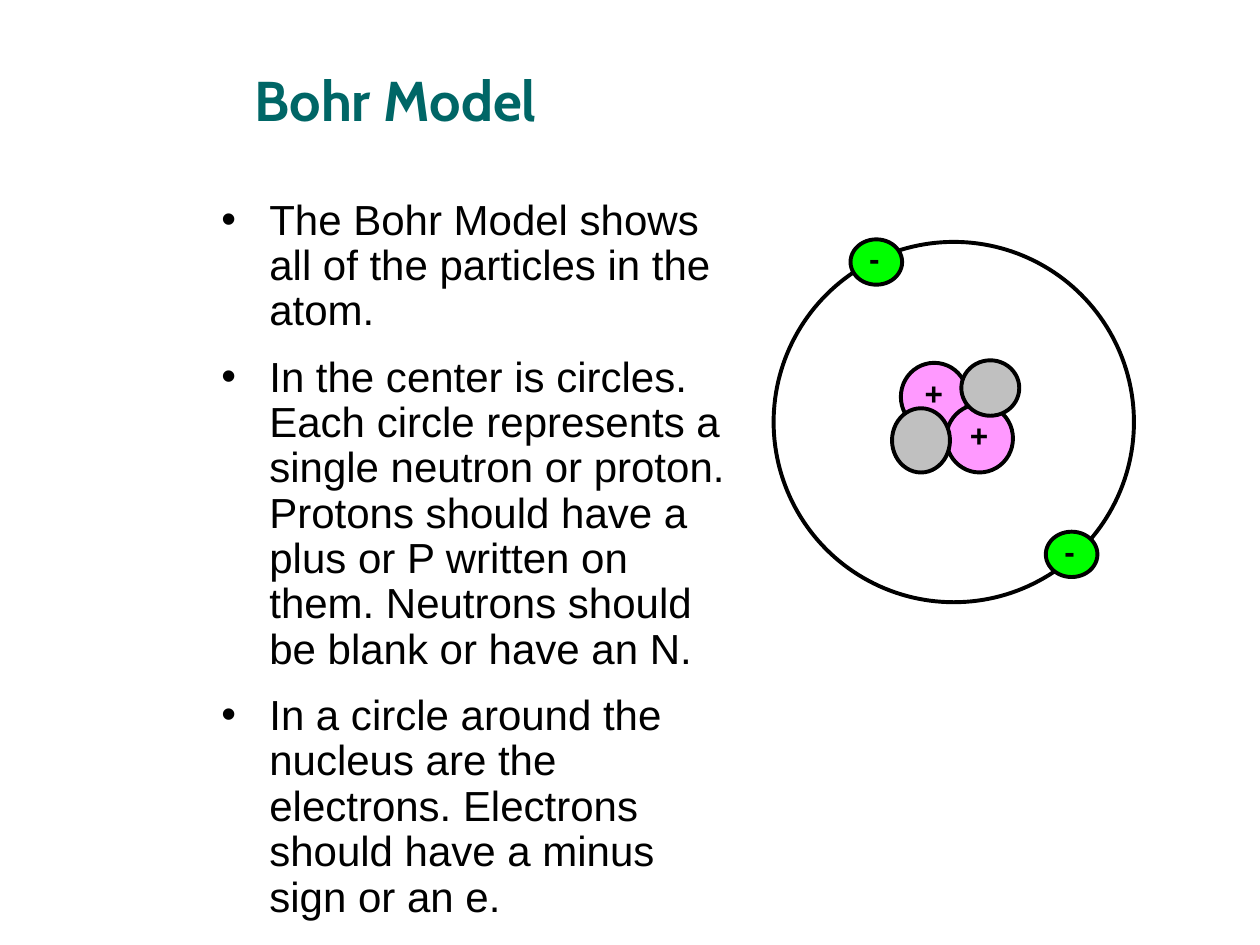
import pptx
import pptx.dml.color
import pptx.enum.shapes
import pptx.enum.text
import pptx.util
from lxml import etree

Inches = pptx.util.Inches
Pt = pptx.util.Pt
RGBColor = pptx.dml.color.RGBColor
Anchor = pptx.enum.text.MSO_ANCHOR
Align = pptx.enum.text.PP_ALIGN

TEAL = RGBColor(0x00, 0x66, 0x66)
BLACK = RGBColor(0x00, 0x00, 0x00)
PINK = RGBColor(0xFF, 0x99, 0xFF)
GREY = RGBColor(0xC0, 0xC0, 0xC0)
GREEN = RGBColor(0x00, 0xFF, 0x00)

TITLE_ONLY = 5
DRAWING_NS = "{http://schemas.openxmlformats.org/drawingml/2006/main}"

POINTS = [
    "The Bohr Model shows all of the particles in the atom.",
    "In the center is circles. Each circle represents a single neutron or proton. "
    "Protons should have a plus or P written on them. "
    "Neutrons should be blank or have an N.",
    "In a circle around the nucleus are the electrons. "
    "Electrons should have a minus sign or an e.",
]


class SlideBuilder:
    """Holds the text styles and the current page."""

    title_style = {"name": "Cabin", "size": Pt(32), "bold": True}
    body_style = {"name": "Arial", "size": Pt(24), "bold": False}
    sign_style = {"name": "Arial", "size": Pt(18), "bold": True}

    def __init__(self, page):
        self.page = page

    def add_span(self, paragraph, text, style, color, **spacing):
        for name, value in spacing.items():
            setattr(paragraph, name, value)
        span = paragraph.add_run()
        span.text = text
        for name, value in style.items():
            setattr(span.font, name, value)
        span.font.color.rgb = color

    def title(self, text, left, top, width, height):
        box = self.page.shapes.title
        box.left, box.top = Inches(left), Inches(top)
        box.width, box.height = Inches(width), Inches(height)
        frame = box.text_frame
        frame.word_wrap = True
        frame.auto_size = pptx.enum.text.MSO_AUTO_SIZE.NONE
        frame.vertical_anchor = Anchor.MIDDLE
        self.add_span(frame.paragraphs[0], text, self.title_style, TEAL,
                      alignment=Align.LEFT)

    def text_frame(self, left, top, width, height):
        box = self.page.shapes.add_textbox(
            Inches(left), Inches(top), Inches(width), Inches(height))
        box.text_frame.word_wrap = True
        return box.text_frame

    def bullets(self, texts, left, top, width, height):
        frame = self.text_frame(left, top, width, height)
        for index, text in enumerate(texts):
            paragraph = frame.add_paragraph() if index else frame.paragraphs[0]
            properties = paragraph._p.get_or_add_pPr()
            properties.set("marL", str(Inches(0.38)))
            properties.set("indent", str(Inches(-0.38)))
            etree.SubElement(properties, DRAWING_NS + "buFont", typeface="Arial")
            etree.SubElement(properties, DRAWING_NS + "buChar", char="•")
            self.add_span(paragraph, text, self.body_style, BLACK,
                          line_spacing=0.9, space_before=Pt(12 if index else 0))

    def circle(self, left, top, width, height, color=None):
        shape = self.page.shapes.add_shape(
            pptx.enum.shapes.MSO_SHAPE.OVAL,
            Inches(left), Inches(top), Inches(width), Inches(height))
        shape.shadow.inherit = False
        if color is None:
            shape.fill.background()
        else:
            shape.fill.solid()
            shape.fill.fore_color.rgb = color
        shape.line.color.rgb = BLACK
        shape.line.width = Pt(2.25)

    def sign(self, text, left, top, width):
        frame = self.text_frame(left, top, width, 0.34)
        self.add_span(frame.paragraphs[0], text, self.sign_style, BLACK,
                      line_spacing=0.8)

    def proton(self, left, top):
        self.circle(left, top, 0.53, 0.54, PINK)
        self.sign("+", left + 0.09, top + 0.1, 0.57)

    def electron(self, left, top):
        self.circle(left, top, 0.41, 0.36, GREEN)
        self.sign("-", left + 0.05, top + 0.01, 0.34)


def main():
    deck = pptx.Presentation()
    deck.slide_width, deck.slide_height = Inches(10), Inches(7.5)
    builder = SlideBuilder(deck.slides.add_slide(deck.slide_layouts[TITLE_ONLY]))

    # Title and explanation
    builder.title("Bohr Model", 1.92, 0.33, 7.67, 0.92)
    builder.bullets(POINTS, 1.66, 1.53, 4.23, 5.51)

    # Nucleus: two protons, then two neutrons in front
    builder.proton(7.15, 2.88)
    builder.proton(7.51, 3.21)
    builder.circle(7.63, 2.86, 0.46, 0.44, GREY)
    builder.circle(7.08, 3.24, 0.46, 0.51, GREY)

    # Orbit with its electrons
    builder.circle(6.14, 1.92, 2.86, 2.86)
    builder.electron(6.75, 1.9)
    builder.electron(8.3, 4.22)

    deck.save("out.pptx")


if __name__ == "__main__":
    main()
